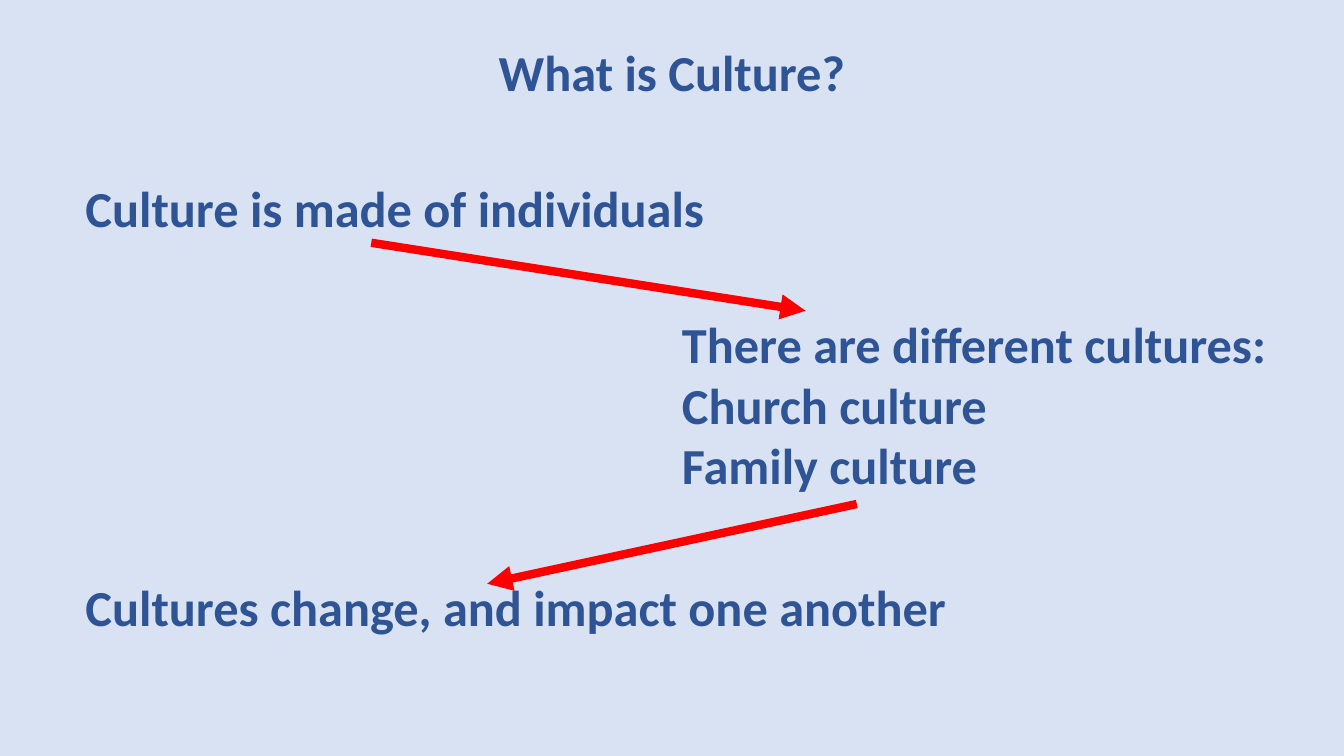
from lxml.etree import SubElement
from pptx import Presentation
from pptx.dml.color import RGBColor
from pptx.enum.shapes import MSO_CONNECTOR as Connector
from pptx.enum.text import MSO_ANCHOR as Anchor, MSO_AUTO_SIZE as AutoSize, PP_ALIGN as Align
from pptx.oxml.ns import qn
from pptx.util import Inches, Pt

COLORS = {"background": "D8E2F3", "text": "2F5496", "arrow": "FF0000"}
WIDTH, HEIGHT = Inches(13.333), Inches(7.5)
COLUMNS, ROWS = 160, 90
TITLE_LAYOUT = 5


def color(name):
    return RGBColor.from_string(COLORS[name])


def across(columns):
    return round(WIDTH * columns / COLUMNS)


def down(rows):
    return round(HEIGHT * rows / ROWS)


def write_lines(box, lines, align=Align.LEFT):
    frame = box.text_frame
    frame.word_wrap = True
    frame.auto_size = AutoSize.NONE
    frame.vertical_anchor = Anchor.TOP
    para = frame.paragraphs[0]
    para.alignment = align
    para.line_spacing = 1.0
    for index, line in enumerate(lines):
        if index:
            para.add_line_break()
        span = para.add_run()
        span.text = line
        span.font.name = "Calibri"
        span.font.size = Pt(36)
        span.font.bold = True
        span.font.color.rgb = color("text")


def add_title(page, text, left, top, width, height):
    title = page.shapes.title
    title.left, title.top = across(left), down(top)
    title.width, title.height = across(width), down(height)
    write_lines(title, [text], Align.CENTER)


def add_statement(page, lines, left, top, width, height):
    box = page.shapes.add_textbox(across(left), down(top), across(width), down(height))
    write_lines(box, lines)


def add_arrow(page, start, end):
    arrow = page.shapes.add_connector(
        Connector.STRAIGHT, across(start[0]), down(start[1]), across(end[0]), down(end[1])
    )
    arrow.line.color.rgb = color("arrow")
    arrow.line.width = Pt(6)
    SubElement(arrow.line._get_or_add_ln(), qn("a:tailEnd"), type="triangle")
    SubElement(arrow._element.spPr, qn("a:effectLst"))


def main():
    deck = Presentation()
    deck.slide_width, deck.slide_height = WIDTH, HEIGHT
    page = deck.slides.add_slide(deck.slide_layouts[TITLE_LAYOUT])
    page.background.fill.solid()
    page.background.fill.fore_color.rgb = color("background")

    add_title(page, "What is Culture?", 58, 4.3, 44, 8.5)
    add_statement(page, ["Culture is made of individuals"], 9, 20.5, 77, 8.5)
    cultures = ["There are different cultures:", "Church culture", "Family culture"]
    add_statement(page, cultures, 80, 36.7, 73, 23)
    add_statement(page, ["Cultures change, and impact one another"], 9, 68, 106, 8.5)
    add_arrow(page, (44.2, 28.9), (95.9, 37))
    add_arrow(page, (102, 60), (58, 69.5))

    deck.save("out.pptx")


if __name__ == "__main__":
    main()
